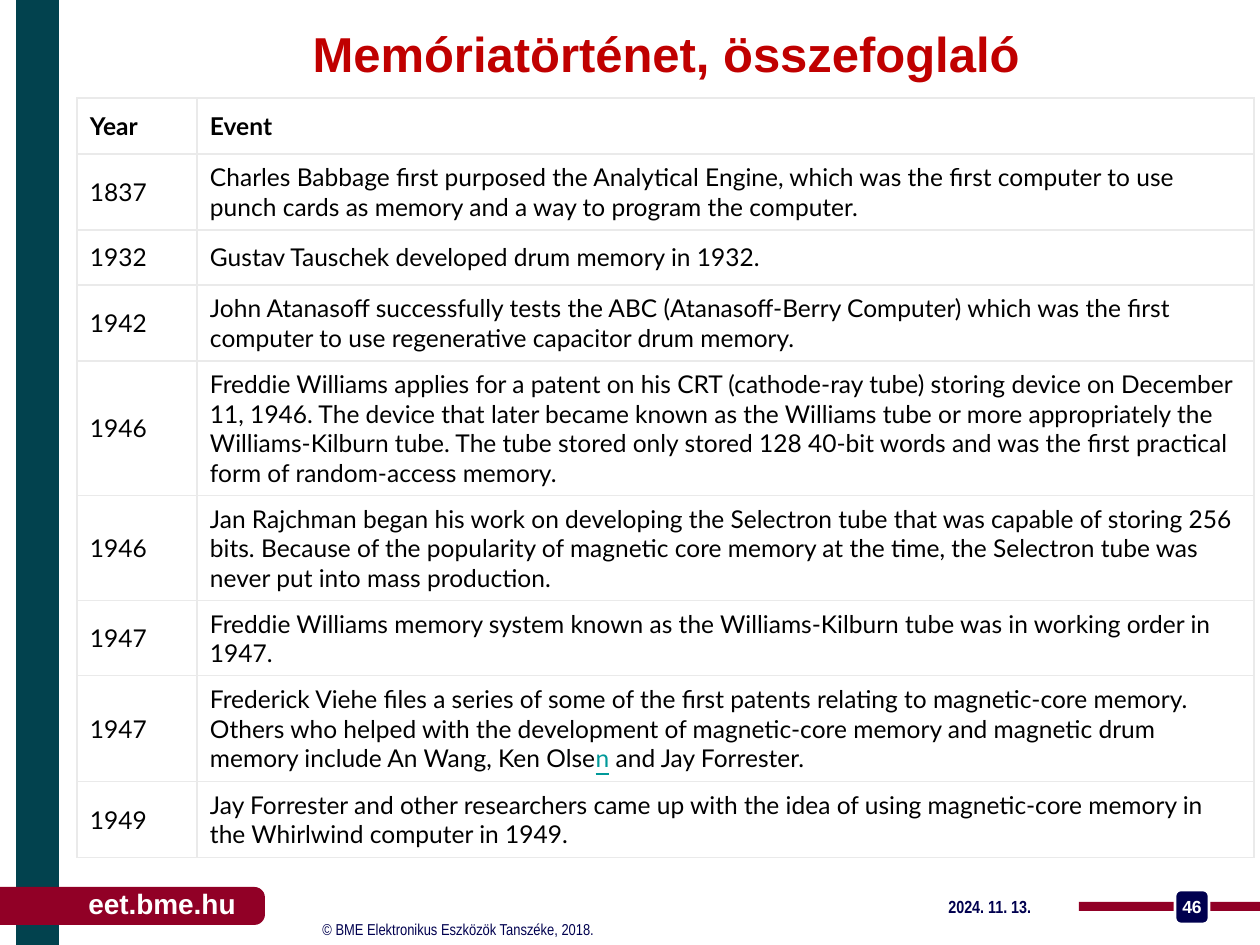
from lxml.etree import SubElement
from pptx import Presentation
from pptx.dml.color import RGBColor
from pptx.enum.shapes import MSO_SHAPE as Shape
from pptx.enum.text import MSO_ANCHOR as Anchor, PP_ALIGN as Align
from pptx.oxml.ns import qn
from pptx.util import Pt

PX = 914400 / 126
COLORS = {
    "teal": "02424E", "crimson": "910026", "navy": "00004F", "white": "FFFFFF",
    "black": "000000", "title": "C00000", "link": "009999", "grid": "EAEAEA",
}
COLUMN_WIDTHS = [120, 1057]
ROW_HEIGHTS = [56, 76, 55, 76, 135, 105, 75, 106, 76]
HISTORY = [
    ("Year", "Event"),
    ("1837", "Charles Babbage first purposed the Analytical Engine, which was the first "
             "computer to use punch cards as memory and a way to program the computer."),
    ("1932", "Gustav Tauschek developed drum memory in 1932."),
    ("1942", "John Atanasoff successfully tests the ABC (Atanasoff-Berry Computer) which was "
             "the first computer to use regenerative capacitor drum memory."),
    ("1946", "Freddie Williams applies for a patent on his CRT (cathode-ray tube) storing "
             "device on December 11, 1946. The device that later became known as the Williams "
             "tube or more appropriately the Williams-Kilburn tube. The tube stored only stored "
             "128 40-bit words and was the first practical form of random-access memory."),
    ("1946", "Jan Rajchman began his work on developing the Selectron tube that was capable of "
             "storing 256 bits. Because of the popularity of magnetic core memory at the time, "
             "the Selectron tube was never put into mass production."),
    ("1947", "Freddie Williams memory system known as the Williams-Kilburn tube was in working "
             "order in 1947."),
    ("1947", "Frederick Viehe files a series of some of the first patents relating to "
             "magnetic-core memory. Others who helped with the development of magnetic-core "
             "memory and magnetic drum memory include An Wang, Ken Olse", "n",
             " and Jay Forrester."),
    ("1949", "Jay Forrester and other researchers came up with the idea of using magnetic-core "
             "memory in the Whirlwind computer in 1949."),
]


def px(*lengths):
    """Turn pixel lengths into EMU."""
    return [round(length * PX) for length in lengths]


def rgb(name):
    """Look up a named colour."""
    return RGBColor.from_string(COLORS[name])


def write(frame, text, size=14, font="Lato", color="black", bold=False, underline=False,
          align=Align.LEFT, spacing=1.0):
    """Add a formatted run to the first paragraph of a text frame."""
    paragraph = frame.paragraphs[0]
    paragraph.alignment = align
    paragraph.line_spacing = spacing
    run = paragraph.add_run()
    run.text = text
    run.font.size, run.font.name = Pt(size), font
    run.font.bold, run.font.underline = bold, underline
    run.font.color.rgb = rgb(color)


def add_block(slide, kind, box, fill, corner=None, outline=None):
    """Draw a filled decorative shape."""
    block = slide.shapes.add_shape(kind, *px(*box))
    block.shadow.inherit = False
    block.fill.solid()
    block.fill.fore_color.rgb = rgb(fill)
    if corner is not None:
        block.adjustments[0] = corner
    if outline:
        block.line.color.rgb = rgb(outline)
        block.line.width = Pt(1.5)
    else:
        block.line.fill.background()


def add_label(slide, box, text, **style):
    """Place a text box with one formatted line."""
    frame = slide.shapes.add_textbox(*px(*box)).text_frame
    frame.word_wrap = True
    frame.vertical_anchor = Anchor.MIDDLE
    write(frame, text, **style)


def set_title(slide, box, text, **style):
    """Position and fill the title placeholder."""
    title = slide.shapes.title
    title.left, title.top, title.width, title.height = px(*box)
    title.text_frame.vertical_anchor = Anchor.TOP
    write(title.text_frame, text, **style)


def style_cell(cell):
    """Give a cell its grid lines, margins and fill."""
    properties = cell._tc.get_or_add_tcPr()
    for side in ("lnL", "lnR", "lnT", "lnB"):
        border = SubElement(properties, qn(f"a:{side}"), w=str(Pt(0.75)))
        SubElement(SubElement(border, qn("a:solidFill")), qn("a:srgbClr"), val=COLORS["grid"])
    cell.fill.solid()
    cell.fill.fore_color.rgb = rgb("white")
    cell.vertical_anchor = Anchor.MIDDLE
    cell.margin_left, cell.margin_right = px(13, 13)
    cell.margin_top, cell.margin_bottom = px(8, 8)


def add_history(slide, left, top):
    """Build the table of memory milestones."""
    size = px(left, top, sum(COLUMN_WIDTHS), sum(ROW_HEIGHTS))
    table = slide.shapes.add_table(len(HISTORY), len(COLUMN_WIDTHS), *size).table
    table.first_row = table.horz_banding = False
    for column, width in zip(table.columns, px(*COLUMN_WIDTHS)):
        column.width = width
    for row, height, (year, *event), heading in zip(
            table.rows, px(*ROW_HEIGHTS), HISTORY, [True] + [False] * len(HISTORY)):
        row.height = height
        for cell, parts in zip(row.cells, ([year], event)):
            style_cell(cell)
            for index, part in enumerate(parts):
                linked = index == 1
                write(cell.text_frame, part, bold=heading, underline=linked,
                      color="link" if linked else "black")


def main():
    """Build and save the slide."""
    deck = Presentation()
    deck.slide_width, deck.slide_height = px(1260, 945)
    slide = deck.slides.add_slide(deck.slide_layouts[5])
    add_block(slide, Shape.RECTANGLE, (16, 0, 43, 945), "teal")
    add_block(slide, Shape.RECTANGLE, (1079, 902, 181, 9), "crimson")
    add_block(slide, Shape.ROUNDED_RECTANGLE, (1175, 890, 34, 34), "navy", 0.17, "white")
    add_block(slide, Shape.ROUNDED_RECTANGLE, (-21, 887, 286, 38), "crimson", 0.28)
    add_label(slide, (72, 885, 180, 41), "eet.bme.hu", size=16, font="Arial",
              color="white", bold=True, align=Align.CENTER, spacing=0.85)
    add_label(slide, (310, 916, 432, 29), "© BME Elektronikus Eszközök Tanszéke, 2018.",
              size=9, font="Arial Narrow", color="navy", spacing=0.85)
    add_label(slide, (936, 889, 164, 34), "2024. 11. 13.", size=10,
              font="Arial Narrow", color="navy", bold=True)
    add_label(slide, (1161, 891, 62, 30), "46", size=10, font="Arial",
              color="white", bold=True, align=Align.CENTER)
    add_history(slide, 77, 98)
    set_title(slide, (300, 17, 885, 72), "Memóriatörténet, összefoglaló", size=28,
              font="Arial", color="title", bold=True)
    deck.save("out.pptx")


if __name__ == "__main__":
    main()
